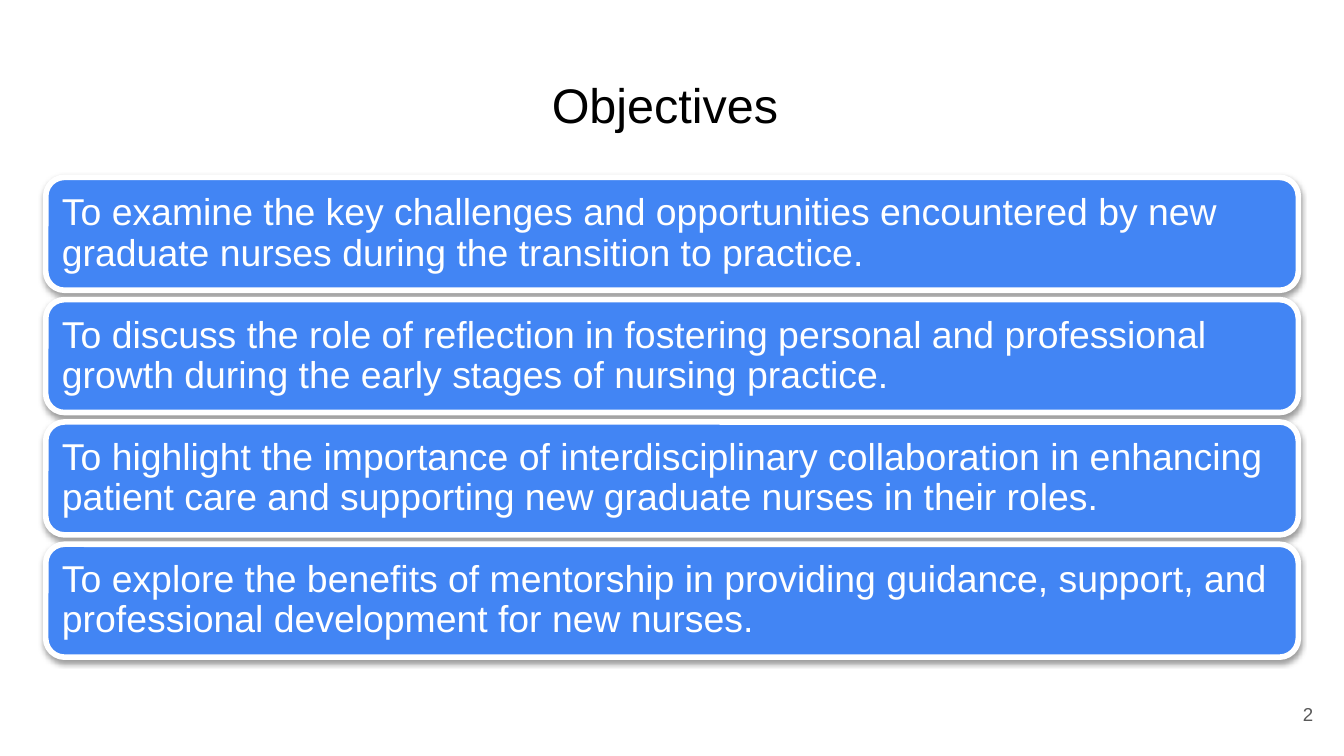
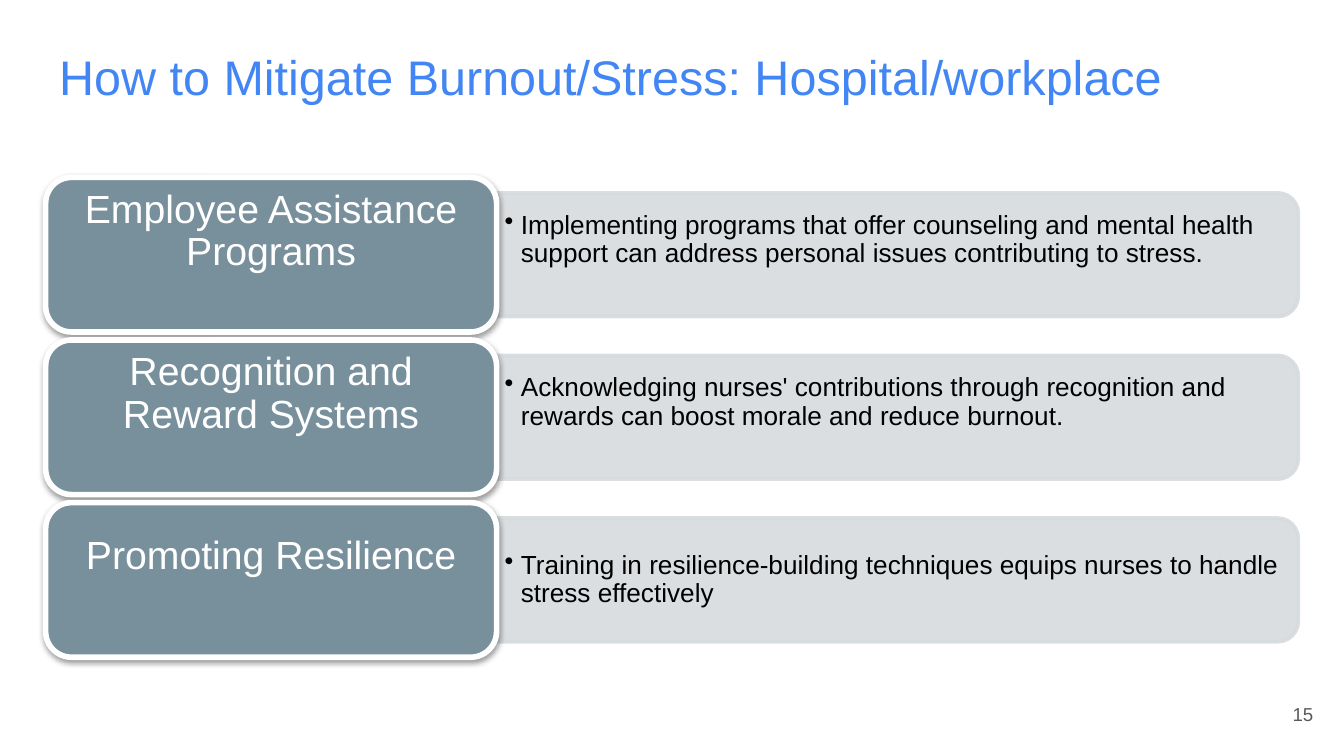
from lxml import etree
from pptx import Presentation
from pptx.dml.color import RGBColor
from pptx.enum.shapes import MSO_SHAPE
from pptx.enum.text import MSO_ANCHOR, MSO_AUTO_SIZE, PP_ALIGN
from pptx.oxml.ns import qn
from pptx.util import Inches, Pt

ROUND = MSO_SHAPE.ROUNDED_RECTANGLE
ROUND_TOP = MSO_SHAPE.ROUND_2_SAME_RECTANGLE
LEFT, CENTER, RIGHT = PP_ALIGN.LEFT, PP_ALIGN.CENTER, PP_ALIGN.RIGHT
MIDDLE = MSO_ANCHOR.MIDDLE
NO_FIT = MSO_AUTO_SIZE.NONE
TITLE_ONLY = 5

FONT = "Arial"
BLACK, WHITE, BLUE = "000000", "FFFFFF", "4285F4"
SLATE, MIST, GRAY = "78909C", "D6DBDE", "595959"

# Boxes: left, top, width, height
TITLE = (0.34, 0.49, 9.32, 0.63)
BODY = (0.34, 1.32, 9.32, 3.57)
PAGE_NUMBER = (9.27, 5.1, 0.6, 0.43)

# Insets: left, top, right, bottom
EVEN = (0.1, 0.1, 0.1, 0.1)
RAISED = (0.1, 0, 0.1, 0.42)

OBJECTIVES = [
    "To examine the key challenges and opportunities encountered by new "
    "graduate nurses during the transition to practice.",
    "To discuss the role of reflection in fostering personal and professional "
    "growth during the early stages of nursing practice.",
    "To highlight the importance of interdisciplinary collaboration in "
    "enhancing patient care and supporting new graduate nurses in their roles.",
    "To explore the benefits of mentorship in providing guidance, support, and "
    "professional development for new nurses.",
]

# Measure, explanation, lift of the explanation above the middle
MEASURES = [
    ("Employee Assistance Programs",
     "Implementing programs that offer counseling and mental health support "
     "can address personal issues contributing to stress.", 0.22),
    ("Recognition and Reward Systems",
     "Acknowledging nurses' contributions through recognition and rewards "
     "can boost morale and reduce burnout.", 0.22),
    ("Promoting Resilience",
     "Training in resilience-building techniques equips nurses to handle "
     "stress effectively", 0),
]


def color(hex_code):
    return RGBColor.from_string(hex_code)


def add_child(parent, tag, **attributes):
    child = etree.SubElement(parent, qn(tag))
    for key, value in attributes.items():
        child.set(key, str(value))
    return child


def write(shape, text, size=20, ink=WHITE, align=LEFT, spacing=0.9,
          insets=EVEN, bullet=False):
    """Fill a shape with one paragraph."""
    frame = shape.text_frame
    frame.word_wrap = True
    frame.auto_size = NO_FIT
    frame.vertical_anchor = MIDDLE
    (frame.margin_left, frame.margin_top,
     frame.margin_right, frame.margin_bottom) = map(Inches, insets)
    paragraph = frame.paragraphs[0]
    if bullet:
        props = paragraph._p.get_or_add_pPr()
        props.set("marL", str(Inches(0.12)))
        props.set("indent", str(Inches(-0.12)))
        add_child(add_child(props, "a:buClr"), "a:srgbClr", val=ink)
        add_child(props, "a:buChar", char="•")
    paragraph.alignment = align
    paragraph.line_spacing = spacing
    run = paragraph.add_run()
    run.text = text
    run.font.name = FONT
    run.font.size = Pt(size)
    run.font.color.rgb = color(ink)


def add_text(slide, box, text, **style):
    write(slide.shapes.add_textbox(*map(Inches, box)), text, **style)


def add_filled(slide, kind, box, fill, line, weight):
    shape = slide.shapes.add_shape(kind, *map(Inches, box))
    shape.shadow.inherit = False
    shape.fill.solid()
    shape.fill.fore_color.rgb = color(fill)
    shape.line.color.rgb = color(line)
    shape.line.width = Pt(weight)
    return shape


def add_card(slide, box, fill):
    """Rounded card with a white border and a soft shadow below it."""
    card = add_filled(slide, ROUND, box, fill, WHITE, 3)
    effects = card._element.spPr.find(qn("a:effectLst"))
    shadow = add_child(effects, "a:outerShdw", blurRad=Pt(3.1), dist=Pt(1.6),
                       dir=90 * 60000, algn="ctr", rotWithShape=0)
    ink = add_child(shadow, "a:srgbClr", val=BLACK)
    add_child(ink, "a:alpha", val=38000)
    return card


def add_panel(slide, box):
    """Translucent panel, rounded on its right side only."""
    left, top, width, height = box
    upright = (left + (width - height) / 2, top + (height - width) / 2,
               height, width)
    panel = add_filled(slide, ROUND_TOP, upright, MIST, MIST, 2)
    panel.rotation = 90
    for tint in panel._element.spPr.iter(qn("a:srgbClr")):
        add_child(tint, "a:alpha", val=90000)


def split_rows(box, count, gap):
    """Cut a box into equal rows with a fixed gap between them."""
    left, top, width, height = box
    row = (height - gap * (count - 1)) / count
    return [(left, top + i * (row + gap), width, row) for i in range(count)]


def add_page(prs, title, number, **title_style):
    """Slide with its title and page number."""
    slide = prs.slides.add_slide(prs.slide_layouts[TITLE_ONLY])
    heading = slide.shapes.title
    heading.left, heading.top, heading.width, heading.height = map(
        Inches, TITLE)
    write(heading, title, size=26, **title_style)
    add_text(slide, PAGE_NUMBER, number, size=10, ink=GRAY, align=RIGHT,
             spacing=1.0)
    return slide


def add_objectives(slide, box):
    """Stack of full-width cards."""
    rows = split_rows(box, len(OBJECTIVES), 0.07)
    for objective, row in zip(OBJECTIVES, rows):
        write(add_card(slide, row, BLUE), objective, insets=(0.08,) * 4)


def add_measures(slide, box):
    """Rows with a measure on the left and its explanation on the right."""
    rows = split_rows(box, len(MEASURES), 0.06)
    for (measure, explanation, lift), row in zip(MEASURES, rows):
        left, top, width, height = row
        card_width = width * 0.36
        panel_left, panel_width = left + card_width, width - card_width
        add_panel(slide, (panel_left, top + height * 0.1,
                          panel_width, height * 0.8))
        add_text(slide, (panel_left, top + 0.16, panel_width - 0.04,
                         height - 0.32),
                 explanation, size=14, ink=BLACK, bullet=True,
                 insets=(0.06, 0.03, 0.06, 0.03 + lift))
        card = add_card(slide, (left, top, card_width, height), SLATE)
        write(card, measure, size=21, align=CENTER,
              insets=(0.09, 0.04, 0.09, 0.38))


def main():
    prs = Presentation()
    prs.slide_width = Inches(10)
    prs.slide_height = prs.slide_width * 9 // 16

    # Objectives
    objectives = add_page(prs, "Objectives ", "2", ink=BLACK, align=CENTER)
    add_objectives(objectives, BODY)

    # Burnout and stress
    mitigation = add_page(
        prs, "How to Mitigate Burnout/Stress: Hospital/workplace", "15",
        ink=BLUE, insets=RAISED)
    add_measures(mitigation, BODY)

    prs.save("out.pptx")


if __name__ == "__main__":
    main()
